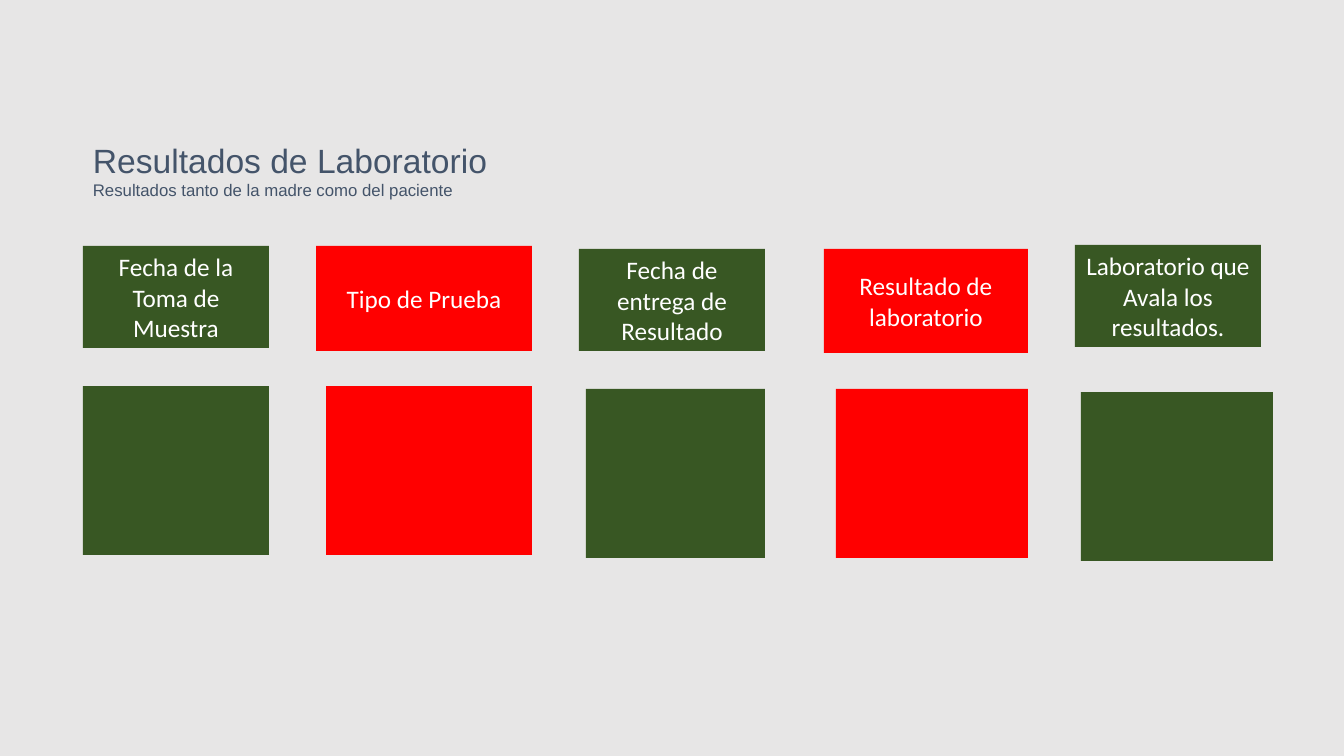
from pptx import Presentation
from pptx.dml.color import RGBColor
from pptx.enum.shapes import MSO_SHAPE
from pptx.enum.text import MSO_ANCHOR, PP_ALIGN
from pptx.util import Emu, Pt

RECT = MSO_SHAPE.RECTANGLE
MIDDLE = MSO_ANCHOR.MIDDLE
CENTER = PP_ALIGN.CENTER

GREEN = RGBColor(0x38, 0x57, 0x23)
RED = RGBColor(0xFF, 0x00, 0x00)
WHITE = RGBColor(0xFF, 0xFF, 0xFF)
SLATE = RGBColor(0x44, 0x54, 0x6A)
GRAY = RGBColor(0xE7, 0xE6, 0xE6)


def px(*values):
    return [Emu(round(v * 914400 / 100.8)) for v in values]


def write(p, text, size, name, color):
    r = p.add_run()
    r.text = text
    for key, value in {"size": Pt(size), "name": name}.items():
        setattr(r.font, key, value)
    r.font.color.rgb = color


prs = Presentation()
prs.slide_width, prs.slide_height = px(1344, 756)
s = prs.slides.add_slide(prs.slide_layouts[6])
s.background.fill.solid()
s.background.fill.fore_color.rgb = GRAY

columns = [
    ("Fecha de la Toma de Muestra", (83, 246, 186, 102), (83, 386, 186, 169)),
    ("Tipo de Prueba", (316, 246, 216, 105), (326, 386, 206, 169)),
    ("Fecha de entrega de Resultado", (579, 249, 186, 102), (586, 389, 179, 169)),
    ("Resultado de laboratorio", (824, 249, 204, 104), (836, 389, 192, 169)),
    ("Laboratorio que Avala los resultados.", (1075, 245, 186, 102), (1081, 392, 192, 169)),
]
for i, (label, header, body) in enumerate(columns):
    for text, box in ((label, header), ("", body)):
        sp = s.shapes.add_shape(RECT, *px(*box))
        sp.shadow.inherit = False
        sp.fill.solid()
        sp.fill.fore_color.rgb = RED if i % 2 else GREEN
        sp.line.fill.background()
        if text:
            tf = sp.text_frame
            tf.word_wrap = True
            tf.vertical_anchor = MIDDLE
            p = tf.paragraphs[0]
            p.alignment = CENTER
            write(p, text, 18, "Calibri", WHITE)

tf = s.shapes.add_textbox(*px(83, 132, 945, 76)).text_frame
tf.word_wrap = True
tf.vertical_anchor = MIDDLE
write(tf.paragraphs[0], "Resultados de Laboratorio", 24, "Arial", SLATE)
write(tf.add_paragraph(), "Resultados tanto de la madre como del paciente", 12, "Arial", SLATE)

prs.save("out.pptx")
